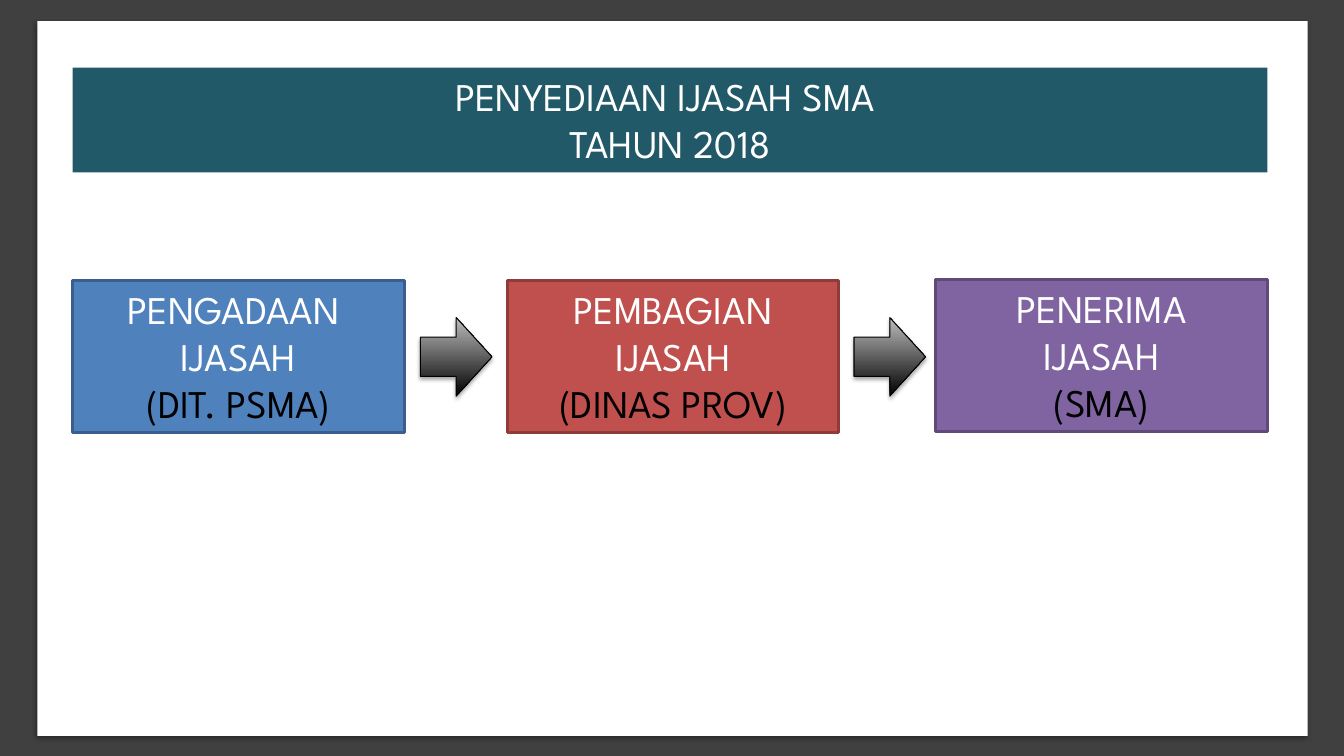
import pptx
import pptx.dml.color
import pptx.enum.shapes
import pptx.enum.text
import pptx.oxml
import pptx.oxml.ns
import pptx.util

WIDTH, HEIGHT = 13.33, 7.5
LEFT, CONTENT_WIDTH = 0.72, 11.85
STEP_WIDTH, STEP_HEIGHT = 3.29, 1.51
ARROW_WIDTH, ARROW_HEIGHT, ARROW_TOP = 0.71, 0.78, 3.15
FONT = "League Spartan"
COLORS = {
    "frame": "404040", "white": "FFFFFF", "black": "000000", "title": "215968",
    "blue": "4F81BD", "blue_edge": "3A5F8C",
    "red": "C0504D", "red_edge": "8E3B39",
    "purple": "8064A2", "purple_edge": "5F4A78",
    "silver": "BDBDBD",
}
STEPS = [
    (LEFT, 2.78, "blue", ["PENGADAAN ", "IJASAH", "(DIT. PSMA)"]),
    (5.03, 2.78, "red", ["PEMBAGIAN", "IJASAH", "(DINAS PROV)"]),
    (LEFT + CONTENT_WIDTH - STEP_WIDTH, 2.77, "purple",
     ["PENERIMA", "IJASAH", "(SMA)"]),
]
ARROW_LEFTS = [4.17, 8.47]


def color(name):
    return pptx.dml.color.RGBColor.from_string(COLORS[name])


def add_box(page, left, top, width, height, fill=None, edge=None, weight=2,
            kind=pptx.enum.shapes.MSO_SHAPE.RECTANGLE):
    """Add a preset shape without a shadow; no fill name leaves the fill open."""
    box = page.shapes.add_shape(
        kind, *(pptx.util.Inches(size) for size in (left, top, width, height)))
    if fill:
        box.fill.solid()
        box.fill.fore_color.rgb = color(fill)
    if edge:
        box.line.color.rgb = color(edge)
        box.line.width = pptx.util.Pt(weight)
    else:
        box.line.fill.background()
    box.shadow.inherit = False
    return box


def add_shadow(box, opacity, blur, distance):
    """Give the box a soft black shadow straight below it (percent, points)."""
    shadow = pptx.oxml.parse_xml(
        f'<a:outerShdw {pptx.oxml.ns.nsdecls("a")} blurRad="{pptx.util.Pt(blur)}" '
        f'dist="{pptx.util.Pt(distance)}" dir="5400000" rotWithShape="0">'
        f'<a:srgbClr val="{COLORS["black"]}"><a:alpha val="{opacity * 1000}"/>'
        '</a:srgbClr></a:outerShdw>')
    box._element.spPr.find(pptx.oxml.ns.qn("a:effectLst")).append(shadow)


def write_lines(box, lines):
    """Write centred lines; a line in brackets is black, the others white."""
    frame = box.text_frame
    frame.word_wrap = True
    frame.auto_size = pptx.enum.text.MSO_AUTO_SIZE.SHAPE_TO_FIT_TEXT
    frame.vertical_anchor = pptx.enum.text.MSO_ANCHOR.TOP
    for index, line in enumerate(lines):
        para = frame.add_paragraph() if index else frame.paragraphs[0]
        para.alignment = pptx.enum.text.PP_ALIGN.CENTER
        span = para.add_run()
        span.text = line
        span.font.name = FONT
        span.font.size = pptx.util.Pt(28)
        span.font.color.rgb = color("black" if line.startswith("(") else "white")


def add_arrow(page, left):
    arrow = add_box(page, left, ARROW_TOP, ARROW_WIDTH, ARROW_HEIGHT,
                    edge="black", weight=0.75,
                    kind=pptx.enum.shapes.MSO_SHAPE.RIGHT_ARROW)
    arrow.fill.gradient()
    arrow.fill.gradient_angle = 90
    for stop, position, name in zip(arrow.fill.gradient_stops, (0, 1),
                                    ("black", "silver")):
        stop.position = position
        stop.color.rgb = color(name)
    add_shadow(arrow, 35, 3.1, 1.8)


def main():
    deck = pptx.Presentation()
    deck.slide_width = pptx.util.Inches(WIDTH)
    deck.slide_height = pptx.util.Inches(HEIGHT)
    page = deck.slides.add_slide(deck.slide_layouts[6])

    add_box(page, 0, 0, WIDTH, HEIGHT, "frame")
    paper = add_box(page, 0.37, 0.21, 12.6, 7.09, "white")
    add_shadow(paper, 38, 3.1, 1.6)

    title = add_box(page, LEFT, 0.67, CONTENT_WIDTH, 1.04, "title")
    write_lines(title, ["PENYEDIAAN IJASAH SMA ", "TAHUN 2018"])

    for left, top, name, lines in STEPS:
        step = add_box(page, left, top, STEP_WIDTH, STEP_HEIGHT,
                       name, f"{name}_edge")
        write_lines(step, lines)
    for left in ARROW_LEFTS:
        add_arrow(page, left)

    deck.save("out.pptx")


if __name__ == "__main__":
    main()
